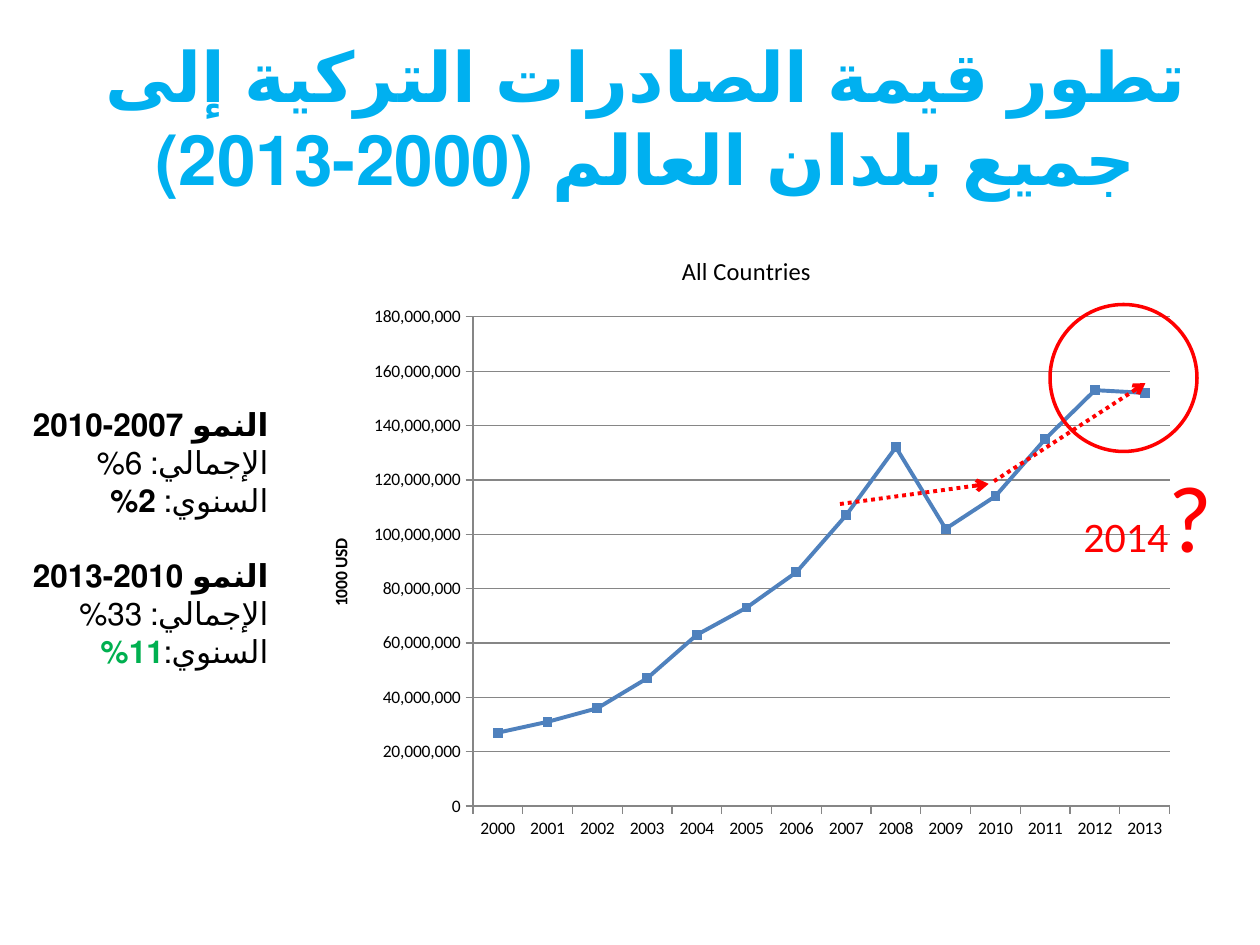
from lxml import etree
from pptx import Presentation
from pptx.chart.data import CategoryChartData
from pptx.dml.color import RGBColor
from pptx.enum.chart import XL_CHART_TYPE, XL_MARKER_STYLE, XL_TICK_MARK
from pptx.enum.dml import MSO_LINE
from pptx.enum.lang import MSO_LANGUAGE_ID
from pptx.enum.shapes import MSO_CONNECTOR, MSO_SHAPE
from pptx.enum.text import MSO_ANCHOR, MSO_AUTO_SIZE, PP_ALIGN
from pptx.oxml import parse_xml
from pptx.oxml.ns import nsdecls, qn
from pptx.util import Pt

LINE_MARKERS = XL_CHART_TYPE.LINE_MARKERS
SQUARE = XL_MARKER_STYLE.SQUARE
OUTSIDE = XL_TICK_MARK.OUTSIDE
DOTTED = MSO_LINE.ROUND_DOT
ARABIC = MSO_LANGUAGE_ID.ARABIC
STRAIGHT = MSO_CONNECTOR.STRAIGHT
OVAL = MSO_SHAPE.OVAL
MIDDLE = MSO_ANCHOR.MIDDLE
GROW = MSO_AUTO_SIZE.SHAPE_TO_FIT_TEXT
LEFT, CENTER, RIGHT = PP_ALIGN.LEFT, PP_ALIGN.CENTER, PP_ALIGN.RIGHT

FONT = "Calibri"
COLORS = {
    "title": "00B0F0",
    "text": "000000",
    "growth": "00B050",
    "accent": "FF0000",
    "series": "4F81BD",
    "grid": "868686",
}
TITLE = "تطور قيمة الصادرات التركية إلى جميع بلدان العالم (2000-2013)"
EXPORTS_MILLIONS = [27, 31, 36, 47, 63, 73, 86, 107, 132, 102, 114, 135, 153, 152]
FIRST_YEAR = 2000
LINE_HEIGHT = 21.5

# Each line: space before, then spans of (text, bold, colour)
GROWTH_LINES = [
    (0, [("النمو 2007-2010", True, "text")]),
    (0, [("الإجمالي:\t 6%", False, "text")]),
    (0, [("السنوي:\t ", False, "text"), ("2%", True, "text")]),
    (LINE_HEIGHT, [("النمو 2010-2013", True, "text")]),
    (0, [("الإجمالي: \t33%", False, "text")]),
    (0, [("السنوي:\t", False, "text"), ("11%", True, "growth")]),
]
TREND_ARROWS = [((480, 288), (565, 276.5)), ((568, 275), (654.5, 219))]


def color(name):
    return RGBColor.from_string(COLORS[name])


def style_font(font, size, color_name, bold=False):
    font.name = FONT
    font.size = Pt(size)
    font.bold = bold
    font.color.rgb = color(color_name)


def add_span(para, text, size, color_name, bold=False):
    span = para.add_run()
    span.text = text
    style_font(span.font, size, color_name, bold)
    return span


def add_arabic_span(para, text, size, color_name, bold=False):
    add_span(para, text, size, color_name, bold).font.language_id = ARABIC


def align(para, alignment, right_to_left=False):
    para.alignment = alignment
    if right_to_left:
        para._p.get_or_add_pPr().set("rtl", "1")


def add_title(page):
    title = page.shapes.title
    title.left, title.top, title.width, title.height = Pt(18), Pt(21.6), Pt(702), Pt(90)
    title.text_frame.vertical_anchor = MIDDLE
    title.text_frame.word_wrap = True
    para = title.text_frame.paragraphs[0]
    align(para, CENTER, right_to_left=True)
    add_arabic_span(para, TITLE, 39.6, "title", bold=True)


def add_text_box(page, left, top, width, height, wrap):
    box = page.shapes.add_textbox(Pt(left), Pt(top), Pt(width), Pt(height))
    box.text_frame.word_wrap = wrap
    box.text_frame.auto_size = GROW
    return box.text_frame


def add_growth_notes(page):
    frame = add_text_box(page, 0, 228, 160.5, 160, wrap=True)
    for index, (space, spans) in enumerate(GROWTH_LINES):
        para = frame.add_paragraph() if index else frame.paragraphs[0]
        align(para, RIGHT, right_to_left=True)
        para.space_before = Pt(space)
        for text, bold, color_name in spans:
            add_arabic_span(para, text, 18, color_name, bold)


def add_question(page):
    para = add_text_box(page, 612, 258, 93.6, 72.7, wrap=False).paragraphs[0]
    align(para, LEFT)
    add_span(para, "2014", 24, "accent")
    add_span(para, "?", 54, "accent")


def style_axis(axis):
    axis.major_tick_mark = OUTSIDE
    axis.format.line.color.rgb = color("grid")
    axis.format.line.width = Pt(0.75)
    style_font(axis.tick_labels.font, 10, "text")


def set_plot_area(chart, x, y, w, h):
    """Fix the inner plot area, in fractions of the chart."""
    plot_area = chart._chartSpace.chart.plotArea
    for old in plot_area.findall(qn("c:layout")):
        plot_area.remove(old)
    parts = [("layoutTarget", "inner"), ("xMode", "edge"), ("yMode", "edge"),
             ("x", x), ("y", y), ("w", w), ("h", h)]
    inner = "".join(f'<c:{tag} val="{value}"/>' for tag, value in parts)
    plot_area.insert(0, parse_xml(
        f'<c:layout {nsdecls("c")}><c:manualLayout>{inner}</c:manualLayout></c:layout>'))


def add_exports_chart(page):
    data = CategoryChartData(number_format="#,##0")
    data.categories = [str(FIRST_YEAR + step) for step in range(len(EXPORTS_MILLIONS))]
    data.add_series("All Countries", [value * 1_000_000 for value in EXPORTS_MILLIONS])
    chart = page.shapes.add_chart(
        LINE_MARKERS, Pt(174.5), Pt(131.5), Pt(504), Pt(354), data).chart
    style_font(chart.font, 10, "text")
    chart.has_legend = False
    chart.has_title = True
    add_span(chart.chart_title.text_frame.paragraphs[0], "All Countries", 14, "text")
    chart.plots[0].vary_by_categories = False

    series = chart.plots[0].series[0]
    series.smooth = False
    series.format.line.color.rgb = color("series")
    series.format.line.width = Pt(2.25)
    series.marker.style = SQUARE
    series.marker.size = 5
    series.marker.format.fill.solid()
    series.marker.format.fill.fore_color.rgb = color("series")
    series.marker.format.line.color.rgb = color("series")

    style_axis(chart.category_axis)
    values = chart.value_axis
    style_axis(values)
    values.minimum_scale = 0
    values.maximum_scale = 180_000_000
    values.major_unit = 20_000_000
    values.tick_labels.number_format = "#,##0"
    values.tick_labels.number_format_is_linked = False
    values.major_gridlines.format.line.color.rgb = color("grid")
    values.major_gridlines.format.line.width = Pt(0.75)
    values.has_title = True
    add_span(values.axis_title.text_frame.paragraphs[0], "1000 USD", 10, "text", bold=True)
    set_plot_area(chart, 0.19, 0.14, 0.79, 0.79)


def add_trend_arrow(page, start, end):
    arrow = page.shapes.add_connector(STRAIGHT, *map(Pt, start + end))
    arrow.line.color.rgb = color("accent")
    arrow.line.width = Pt(2.25)
    arrow.line.dash_style = DOTTED
    etree.SubElement(arrow.line._get_or_add_ln(), qn("a:tailEnd"), type="arrow")
    etree.SubElement(arrow._element.spPr, qn("a:effectLst"))


def add_highlight_circle(page):
    circle = page.shapes.add_shape(OVAL, Pt(600), Pt(174), Pt(84), Pt(84))
    circle.shadow.inherit = False
    circle.fill.background()
    circle.line.color.rgb = color("accent")
    circle.line.width = Pt(2)


def main():
    deck = Presentation()
    deck.slide_width, deck.slide_height = Pt(720), Pt(540)
    page = deck.slides.add_slide(deck.slide_layouts[5])
    add_title(page)
    add_growth_notes(page)
    add_exports_chart(page)
    for start, end in TREND_ARROWS:
        add_trend_arrow(page, start, end)
    add_highlight_circle(page)
    add_question(page)
    deck.save("out.pptx")


if __name__ == "__main__":
    main()
